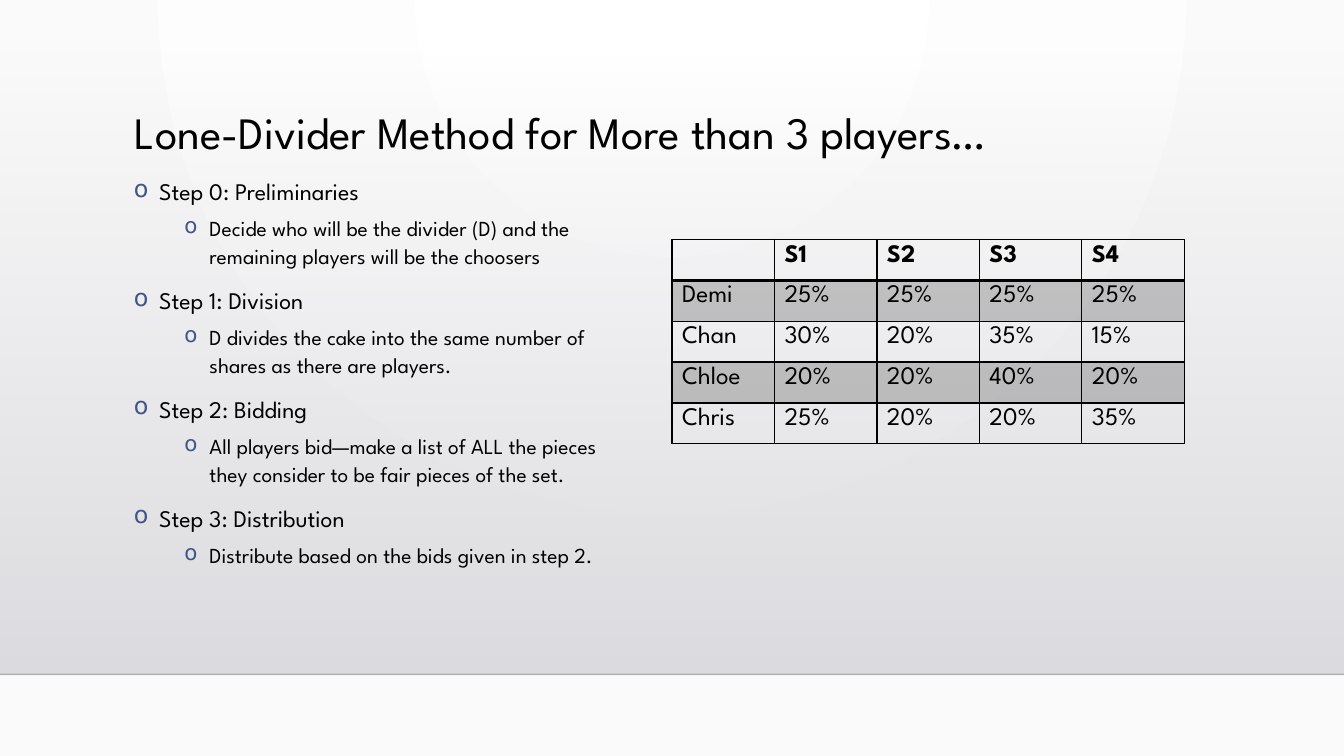
from dataclasses import dataclass

import pptx
import pptx.dml.color
import pptx.enum.shapes
import pptx.enum.text
import pptx.oxml
import pptx.oxml.ns
import pptx.util

Pt = pptx.util.Pt
qn = pptx.oxml.ns.qn
NS = 'xmlns:a="http://schemas.openxmlformats.org/drawingml/2006/main"'
FONT, BLACK, BULLET = "League Spartan", "000000", "415588"
WIDTH, HEIGHT = 960, 540


@dataclass
class Step:
    heading: str
    detail: str


@dataclass
class Level:
    size: float
    indent: float
    before: float


HEADING = Level(17, 18, 10)
DETAIL = Level(15.3, 54, 5)
STEPS = [
    Step("Step 0: Preliminaries",
         "Decide who will be the divider (D) and the remaining players will be the choosers"),
    Step("Step 1: Division",
         "D divides the cake into the same number of shares as there are players."),
    Step("Step 2: Bidding",
         "All players bid—make a list of ALL the pieces they consider to be fair pieces of the set."),
    Step("Step 3: Distribution", "Distribute based on the bids given in step 2."),
]
BIDS = [
    ["", "S1", "S2", "S3", "S4"],
    ["Demi", "25%", "25%", "25%", "25%"],
    ["Chan", "30%", "20%", "35%", "15%"],
    ["Chloe", "20%", "20%", "40%", "20%"],
    ["Chris", "25%", "20%", "20%", "35%"],
]


def rgb(value: str) -> pptx.dml.color.RGBColor:
    return pptx.dml.color.RGBColor.from_string(value)


def xml(text: str):
    return pptx.oxml.parse_xml(text)


def set_alpha(color, percent: int) -> None:
    color.append(xml(f'<a:alpha {NS} val="{percent * 1000}"/>'))


def style(font, size: float, bold: bool = False) -> None:
    for name, value in {"name": FONT, "size": Pt(size), "bold": bold}.items():
        setattr(font, name, value)
    font.color.rgb = rgb(BLACK)


def shade(fill, owner, colors: list[str], direction: str):
    """Apply a two-colour gradient running in the given direction."""
    fill.gradient()
    for stop, color in zip(fill.gradient_stops, colors):
        stop.color.rgb = rgb(color)
    gradient = owner.find(".//" + qn("a:gradFill"))
    gradient.replace(gradient.find(qn("a:lin")), xml(direction))
    return gradient


def add_text_frame(slide, left: float, top: float, width: float, height: float):
    frame = slide.shapes.add_textbox(Pt(left), Pt(top), Pt(width), Pt(height)).text_frame
    frame.word_wrap = True
    frame.vertical_anchor = pptx.enum.text.MSO_ANCHOR.TOP
    return frame


def add_backdrop(slide) -> None:
    shade(slide.background.fill, slide.background._cSld, ["FFFFFF", "FAFAFA"],
          f'<a:path {NS} path="circle"><a:fillToRect l="43000" r="43000" b="100000"/></a:path>')

    wall = slide.shapes.add_shape(pptx.enum.shapes.MSO_SHAPE.RECTANGLE,
                                  0, Pt(36.72), Pt(WIDTH), Pt(444.96))
    wall.shadow.inherit = False
    wall.line.fill.background()
    gradient = shade(wall.fill, wall._element.spPr, ["DCDCE0", "DEDEE2"],
                     f'<a:lin {NS} ang="5400000" scaled="0"/>')
    set_alpha(gradient.find(".//" + qn("a:srgbClr")), 0)

    floor = slide.shapes.add_connector(pptx.enum.shapes.MSO_CONNECTOR.STRAIGHT,
                                       0, Pt(481.68), Pt(WIDTH), Pt(481.68))
    floor.line.width = Pt(1)
    floor.line.color.rgb = rgb("000001")
    properties = floor._element.spPr
    set_alpha(properties.find(".//" + qn("a:srgbClr")), 20)
    properties.append(xml(f"<a:effectLst {NS}/>"))


def add_title(slide, text: str) -> None:
    title = add_text_frame(slide, 89.28, 75.6, 756, 83.52).paragraphs[0]
    title.text = text
    title.line_spacing = 0.9
    style(title.font, 32)


def add_bullet(paragraph, text: str, level: Level, first: bool) -> None:
    paragraph.text = text
    properties = paragraph._p.get_or_add_pPr()
    properties.set("marL", str(Pt(level.indent)))
    properties.set("indent", str(-Pt(18)))
    properties.append(xml(f'<a:buClr {NS}><a:srgbClr val="{BULLET}"/></a:buClr>'))
    properties.append(xml(f'<a:buChar {NS} char="o"/>'))
    paragraph.line_spacing = 1.1
    paragraph.space_before = Pt(0 if first else level.before)
    style(paragraph.font, level.size)


def add_steps(slide) -> None:
    frame = add_text_frame(slide, 88.56, 120.96, 365.76, 352.8)
    items = [item for step in STEPS
             for item in ((step.heading, HEADING), (step.detail, DETAIL))]
    for index, (text, level) in enumerate(items):
        paragraph = frame.add_paragraph() if index else frame.paragraphs[0]
        add_bullet(paragraph, text, level, index == 0)


def add_borders(cell, widths: dict[str, float]) -> None:
    properties = cell._tc.get_or_add_tcPr()
    for index, (side, width) in enumerate(widths.items()):
        properties.insert(index, xml(
            f'<a:ln{side} {NS} w="{Pt(width)}"><a:solidFill>'
            f'<a:srgbClr val="{BLACK}"/></a:solidFill></a:ln{side}>'))


def add_bids(slide) -> None:
    rows, columns = len(BIDS), len(BIDS[0])
    bids = slide.shapes.add_table(rows, columns, Pt(480), Pt(171), Pt(366), Pt(146)).table
    bids.first_row = bids.horz_banding = False
    for column in bids.columns:
        column.width = Pt(73.2)
    for row in bids.rows:
        row.height = Pt(29.2)
    for r, values in enumerate(BIDS):
        for c, value in enumerate(values):
            cell = bids.cell(r, c)
            cell.text = value
            style(cell.text_frame.paragraphs[0].font, 18, bold=r == 0)
            if r % 2:
                cell.fill.solid()
                cell.fill.fore_color.rgb = rgb(BLACK)
                set_alpha(cell._tc.tcPr.find(".//" + qn("a:srgbClr")), 20)
            else:
                cell.fill.background()
            # The rule under the header row is heavier
            add_borders(cell, {"L": 1, "R": 1, "T": 2 if r == 1 else 1, "B": 2 if r == 0 else 1})


def main() -> None:
    deck = pptx.Presentation()
    deck.slide_width, deck.slide_height = Pt(WIDTH), Pt(HEIGHT)
    slide = deck.slides.add_slide(deck.slide_layouts[6])
    add_backdrop(slide)
    add_title(slide, "Lone-Divider Method for More than 3 players…")
    add_steps(slide)
    add_bids(slide)
    deck.save("out.pptx")


if __name__ == "__main__":
    main()
